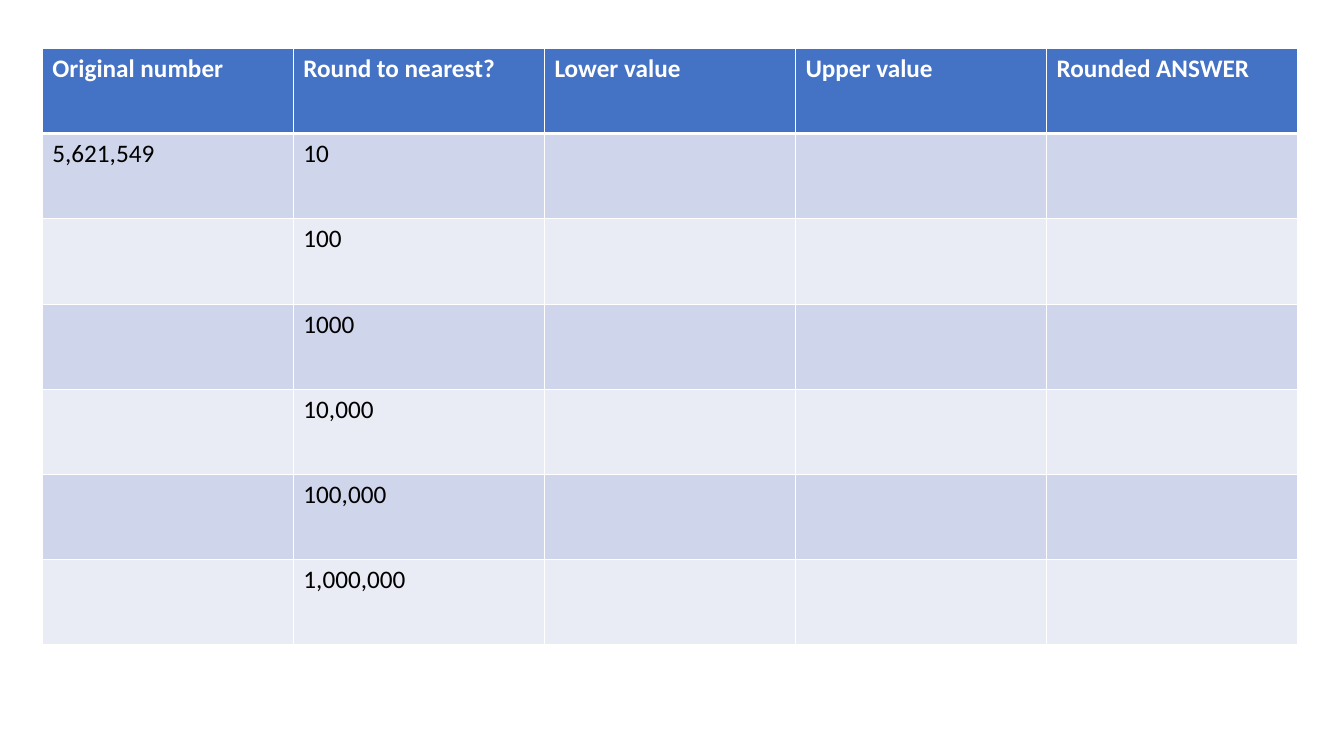
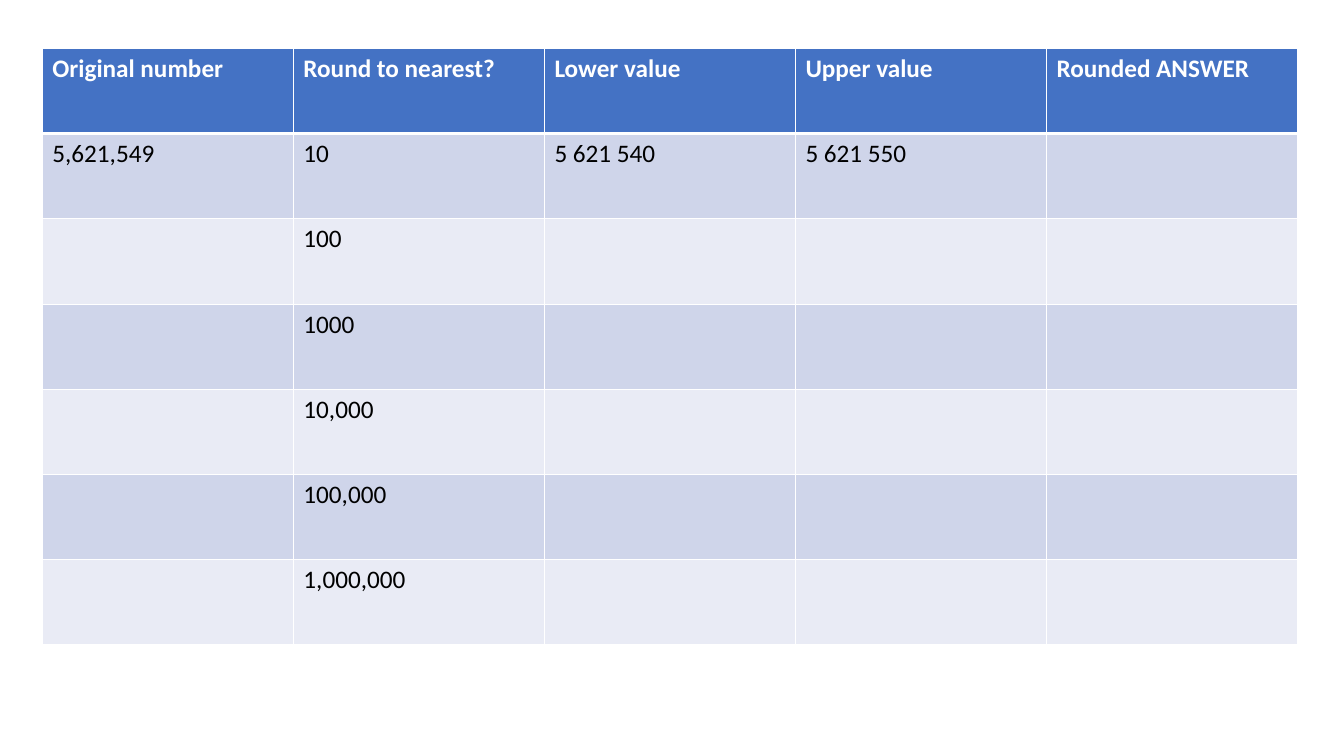
from lxml import etree
from pptx import Presentation
from pptx import util as u
from pptx.dml.color import RGBColor
from pptx.oxml import ns

WHITE = RGBColor(0xFF, 0xFF, 0xFF)
BLACK = RGBColor(0x00, 0x00, 0x00)
BLUE = RGBColor(0x44, 0x72, 0xC4)
BANDS = RGBColor(0xCF, 0xD5, 0xEA), RGBColor(0xE9, 0xEB, 0xF5)
FONT = "Calibri"
BOX = tuple(u.Inches(n) for n in (0.42, 0.48, 12.45, 5.92))

HEADS = ["Original number", "Round to nearest?", "Lower value",
         "Upper value", "Rounded ANSWER"]
STEPS = ["10", "100", "1000", "10,000", "100,000", "1,000,000"]
NUMBER = "5,621,549"


def write(frame, words, size=18, color=BLACK, bold=False):
    run = frame.paragraphs[0].add_run()
    run.text = words
    font = run.font
    font.name = FONT
    font.size = u.Pt(size)
    font.bold = bold
    font.color.rgb = color


def border(cell, **widths):
    props = cell._tc.get_or_add_tcPr()
    for side in "LRTB":
        line = etree.SubElement(props, ns.qn("a:ln" + side),
                                w=str(u.Pt(widths.get(side, 1))))
        fill = etree.SubElement(line, ns.qn("a:solidFill"))
        etree.SubElement(fill, ns.qn("a:srgbClr"), val=str(WHITE))


def paint(cell, color):
    cell.fill.solid()
    cell.fill.fore_color.rgb = color


def draw_grid(slide, box, rows):
    left, top, width, height = box
    table = slide.shapes.add_table(len(rows), len(HEADS), left, top,
                                   width, height).table
    table.horz_banding = False
    for col in table.columns:
        col.width = width // len(HEADS)
    for r, row in enumerate(rows):
        table.rows[r].height = height // len(rows)
        head = r == 0
        for c, words in enumerate(row):
            cell = table.cell(r, c)
            border(cell, T=3 if r == 1 else 1, B=3 if head else 1)
            paint(cell, BLUE if head else BANDS[(r - 1) % 2])
            if words:
                write(cell.text_frame, words, bold=head,
                      color=WHITE if head else BLACK)


def add_task(deck, lower="", upper=""):
    slide = deck.slides.add_slide(deck.slide_layouts[6])
    rows = [HEADS] + [["", step, "", "", ""] for step in STEPS]
    rows[1] = [NUMBER, STEPS[0], lower, upper, ""]
    draw_grid(slide, BOX, rows)


def main():
    deck = Presentation()
    deck.slide_width = u.Inches(13.33)
    deck.slide_height = u.Inches(7.5)
    add_task(deck)
    add_task(deck, lower="5 621 540", upper="5 621 550")
    deck.save("out.pptx")


if __name__ == "__main__":
    main()
